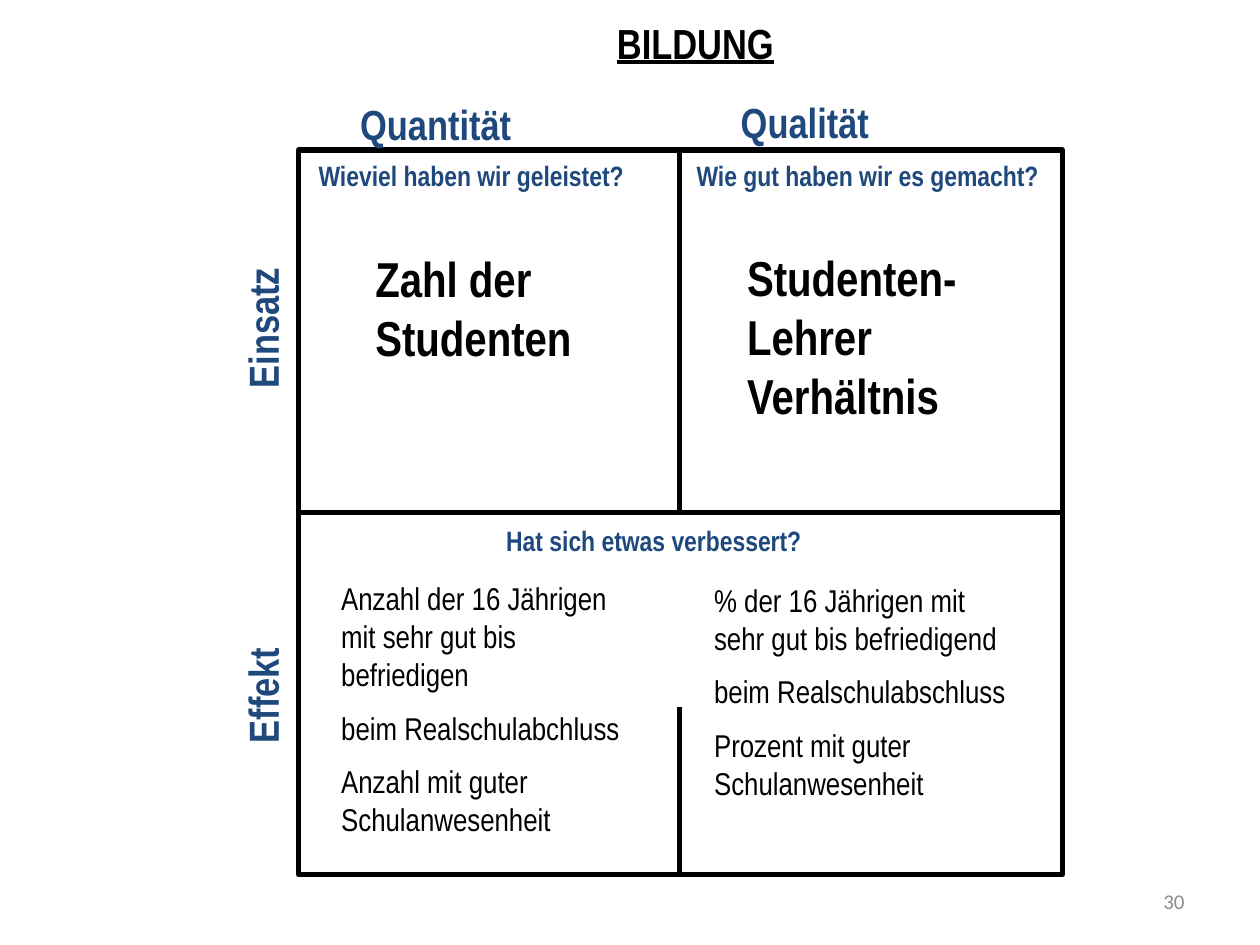
from dataclasses import dataclass

from lxml import etree
from pptx import Presentation
from pptx.dml.color import RGBColor
from pptx.enum.shapes import MSO_CONNECTOR, MSO_SHAPE
from pptx.enum.text import MSO_ANCHOR, PP_ALIGN
from pptx.oxml.ns import qn
from pptx.util import Pt

STRAIGHT = MSO_CONNECTOR.STRAIGHT
RECTANGLE = MSO_SHAPE.RECTANGLE
LEFT, CENTER, RIGHT = PP_ALIGN.LEFT, PP_ALIGN.CENTER, PP_ALIGN.RIGHT
TOP, MIDDLE = MSO_ANCHOR.TOP, MSO_ANCHOR.MIDDLE

COLORS = {"ink": "000000", "heading": "1F497D", "number": "8C8C8C"}
LINE_WIDTH = 3

# Matrix edges and dividers, in points
MATRIX_LEFT, MATRIX_TOP = 170.6, 85.7
MATRIX_WIDTH, MATRIX_HEIGHT = 436.4, 414
MATRIX_RIGHT = MATRIX_LEFT + MATRIX_WIDTH
MATRIX_BOTTOM = MATRIX_TOP + MATRIX_HEIGHT
COLUMN_DIVIDER = MATRIX_LEFT + MATRIX_WIDTH / 2 - 0.7
ROW_DIVIDER = MATRIX_TOP + MATRIX_HEIGHT / 2
LOWER_DIVIDER_TOP = 404


@dataclass(frozen=True)
class Style:
    size: float
    color: str = "ink"
    bold: bool = True
    underline: bool = False
    font: str = "Arial Narrow"
    align: PP_ALIGN = LEFT
    anchor: MSO_ANCHOR = TOP


@dataclass(frozen=True)
class Label:
    paragraphs: tuple[str, ...]
    left: float
    top: float
    width: float
    height: float
    style: Style
    rotation: float = 0


TITLE = Style(24, underline=True, align=CENTER)
AXIS = Style(24, "heading")
ROW_AXIS = Style(24, "heading", align=CENTER)
QUESTION = Style(16, "heading")
MEASURE = Style(28)
EFFECT = Style(18, bold=False)
PAGE_NUMBER = Style(12, "number", bold=False, font="Calibri", align=RIGHT, anchor=MIDDLE)

LABELS = [
    Label(("BILDUNG",), 145.4, 6.5, 504, 36, TITLE),
    Label(("Quantität",), 198.7, 52.6, 158.4, 36, AXIS),
    Label(("Qualität",), 416.2, 51.8, 158.4, 36, AXIS),
    Label(("Einsatz",), 84.8, 169.5, 130, 36, ROW_AXIS, 270),
    Label(("Effekt",), 84.8, 379.4, 130, 36, ROW_AXIS, 270),
    Label(("Wieviel haben wir geleistet?",), 175, 87.1, 206.6, 26.6, QUESTION),
    Label(("Wie gut haben wir es gemacht?",), 391, 87.1, 211.7, 26.6, QUESTION),
    Label(("Hat sich etwas verbessert?",), 282.2, 295.5, 238.3, 26.6, QUESTION),
    Label(("Zahl der Studenten",), 207.4, 138.4, 145.4, 74.9, MEASURE),
    Label(("Studenten-Lehrer Verhältnis",), 419.8, 138, 162, 108.7, MEASURE),
    Label(
        (
            "Anzahl der 16 Jährigen mit sehr gut bis befriedigen",
            "beim Realschulabchluss",
            "Anzahl mit guter Schulanwesenheit",
        ),
        187.9, 327.6, 184.3, 196.6, EFFECT,
    ),
    Label(
        (
            "% der 16 Jährigen mit sehr gut bis befriedigend",
            "beim Realschulabschluss",
            "Prozent mit guter Schulanwesenheit",
        ),
        401, 328.5, 184.3, 170.6, EFFECT,
    ),
    Label(("30",), 516.2, 500.4, 167.8, 28.8, PAGE_NUMBER),
]


def rgb(name: str) -> RGBColor:
    return RGBColor.from_string(COLORS[name])


def draw_frame(slide) -> None:
    frame = slide.shapes.add_shape(
        RECTANGLE, Pt(MATRIX_LEFT), Pt(MATRIX_TOP), Pt(MATRIX_WIDTH), Pt(MATRIX_HEIGHT)
    )
    frame.shadow.inherit = False
    frame.fill.background()
    frame.line.color.rgb = rgb("ink")
    frame.line.width = Pt(LINE_WIDTH)


def draw_divider(slide, x1: float, y1: float, x2: float, y2: float) -> None:
    divider = slide.shapes.add_connector(STRAIGHT, Pt(x1), Pt(y1), Pt(x2), Pt(y2))
    divider.line.color.rgb = rgb("ink")
    divider.line.width = Pt(LINE_WIDTH)
    etree.SubElement(divider._element.spPr, qn("a:effectLst"))


def draw_label(slide, label: Label) -> None:
    style = label.style
    box = slide.shapes.add_textbox(
        Pt(label.left), Pt(label.top), Pt(label.width), Pt(label.height)
    )
    box.rotation = label.rotation
    frame = box.text_frame
    frame.word_wrap = True
    frame.vertical_anchor = style.anchor
    frame.text = "\n".join(label.paragraphs)
    for index, paragraph in enumerate(frame.paragraphs):
        paragraph.alignment = style.align
        paragraph.space_before = Pt(style.size / 2 if index else 0)
        paragraph.font.name = style.font
        paragraph.font.size = Pt(style.size)
        paragraph.font.bold = style.bold
        paragraph.font.underline = style.underline
        paragraph.font.color.rgb = rgb(style.color)


def main() -> None:
    presentation = Presentation()
    presentation.slide_width, presentation.slide_height = Pt(720), Pt(540)
    slide = presentation.slides.add_slide(presentation.slide_layouts[6])
    draw_frame(slide)
    draw_divider(slide, MATRIX_LEFT, ROW_DIVIDER, MATRIX_RIGHT, ROW_DIVIDER)
    draw_divider(slide, COLUMN_DIVIDER, MATRIX_TOP, COLUMN_DIVIDER, ROW_DIVIDER)
    draw_divider(slide, COLUMN_DIVIDER, LOWER_DIVIDER_TOP, COLUMN_DIVIDER, MATRIX_BOTTOM)
    for label in LABELS:
        draw_label(slide, label)
    presentation.save("out.pptx")


if __name__ == "__main__":
    main()
